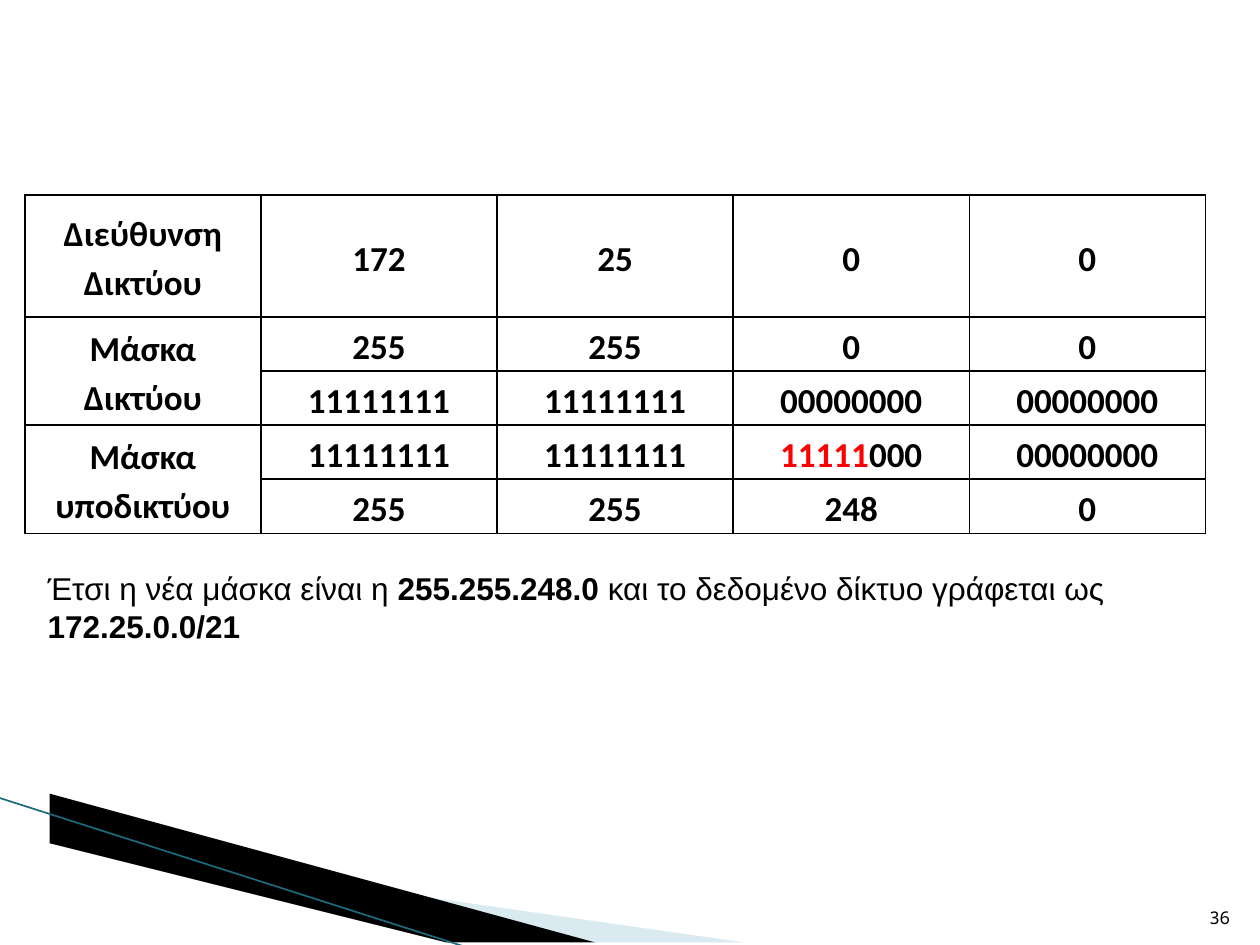
from lxml import etree
from pptx import Presentation
from pptx.dml.color import RGBColor
from pptx.enum.shapes import MSO_CONNECTOR
from pptx.enum.text import MSO_ANCHOR, PP_ALIGN
from pptx.oxml.ns import qn
from pptx.util import Cm, Pt

STRAIGHT = MSO_CONNECTOR.STRAIGHT
MIDDLE, BOTTOM = MSO_ANCHOR.MIDDLE, MSO_ANCHOR.BOTTOM
LEFT, CENTER, RIGHT = PP_ALIGN.LEFT, PP_ALIGN.CENTER, PP_ALIGN.RIGHT
BLACK, RED, PALE_BLUE, TEAL = "000000", "FF0000", "A0CBDC", "1B6A7D"

ONES, ZEROS = "11111111", "00000000"
ROWS = [
    ["Διεύθυνση Δικτύου", "172", "25", "0", "0"],
    ["Μάσκα\nΔικτύου", "255", "255", "0", "0"],
    ["", ONES, ONES, ZEROS, ZEROS],
    ["Μάσκα υποδικτύου", ONES, ONES, "11111000", ZEROS],
    ["", "255", "255", "248", "0"],
]
LABEL_SPANS = [(1, 2), (3, 4)]
SUBNET_BITS = {(3, 3): 5}
ROW_HEIGHTS = [2.46] + [1.09] * 4
COLUMN_WIDTH = 4.76

CONCLUSION = [
    ("Έτσι η νέα μάσκα είναι η ", False),
    ("255.255.248.0 ", True),
    ("και το δεδομένο δίκτυο γράφεται ως ", False),
    ("172.25.0.0/21", True),
]
PAGE_NUMBER = [("36", False)]

WEDGES = [
    ([(1.4, 16.54), (15.11, 19.08), (11.58, 19.08), (1.4, 16.51)], PALE_BLUE, 40),
    ([(1.35, 16.48), (11.61, 19.08), (9.45, 19.1), (1.37, 16.51)], BLACK, 100),
]


def rgb(color):
    return RGBColor.from_string(color)


def style_font(font, name, size):
    font.name = name
    font.size = Pt(size)
    font.color.rgb = rgb(BLACK)


def add_wedge(slide, points, color, opacity):
    builder = slide.shapes.build_freeform(*points[0], scale=Cm(1))
    builder.add_line_segments(points[1:], close=True)
    wedge = builder.convert_to_shape()
    wedge.shadow.inherit = False
    wedge.line.fill.background()
    wedge.fill.solid()
    wedge.fill.fore_color.rgb = rgb(color)
    if opacity < 100:
        tint = wedge.fill._xPr.find(".//" + qn("a:srgbClr"))
        etree.SubElement(tint, qn("a:alpha"), val=str(opacity * 1000))


def add_edge(slide):
    edge = slide.shapes.add_connector(STRAIGHT, Cm(-0.03), Cm(16.08), Cm(9.42), Cm(19.1))
    edge.line.color.rgb = rgb(TEAL)
    edge.line.width = Pt(0.95)
    etree.SubElement(edge._element.spPr, qn("a:effectLst"))


def add_borders(cell):
    properties = cell._tc.get_or_add_tcPr()
    for side in ("a:lnL", "a:lnR", "a:lnT", "a:lnB"):
        border = etree.SubElement(properties, qn(side), w=str(Pt(1)))
        fill = etree.SubElement(border, qn("a:solidFill"))
        etree.SubElement(fill, qn("a:srgbClr"), val=BLACK)


def fill_cell(cell, text, red_digits):
    add_borders(cell)
    cell.fill.background()
    cell.vertical_anchor = MIDDLE
    cell.margin_left = cell.margin_right = Cm(0.18)
    cell.margin_top = cell.margin_bottom = 0
    cell.text = text
    for paragraph in cell.text_frame.paragraphs:
        paragraph.alignment = CENTER
        paragraph.line_spacing = 1.15
        style_font(paragraph.font, "Calibri", 20)
        paragraph.font.bold = True
    if red_digits:
        marked = cell.text_frame.paragraphs[0].runs[0]
        marked.text = text[:red_digits]
        marked.font.color.rgb = rgb(RED)
        cell.text_frame.paragraphs[0].add_run().text = text[red_digits:]


def add_mask_table(slide):
    columns = len(ROWS[0])
    table = slide.shapes.add_table(
        len(ROWS), columns, Cm(0.5), Cm(3.93),
        Cm(COLUMN_WIDTH * columns), Cm(sum(ROW_HEIGHTS))).table
    table.first_row = table.horz_banding = False
    for column in table.columns:
        column.width = Cm(COLUMN_WIDTH)
    for row, height in zip(table.rows, ROW_HEIGHTS):
        row.height = Cm(height)
    for r, texts in enumerate(ROWS):
        for c, text in enumerate(texts):
            fill_cell(table.cell(r, c), text, SUBNET_BITS.get((r, c), 0))
    for first, last in LABEL_SPANS:
        table.cell(first, 0).merge(table.cell(last, 0))


def add_text(slide, box, parts, font, size, align, anchor):
    frame = slide.shapes.add_textbox(*map(Cm, box)).text_frame
    frame.word_wrap = True
    frame.vertical_anchor = anchor
    paragraph = frame.paragraphs[0]
    paragraph.alignment = align
    style_font(paragraph.font, font, size)
    for text, bold in parts:
        run = paragraph.add_run()
        run.text = text
        run.font.bold = bold


def main():
    deck = Presentation()
    deck.slide_width, deck.slide_height = Cm(25.4), Cm(19.05)
    slide = deck.slides.add_slide(deck.slide_layouts[6])
    for wedge in WEDGES:
        add_wedge(slide, *wedge)
    add_edge(slide)
    add_mask_table(slide)
    add_text(slide, (24.03, 17.81, 1.02, 1.02), PAGE_NUMBER,
             "Noto Sans Mono", 10, RIGHT, BOTTOM)
    add_text(slide, (0.71, 11.33, 24, 1.8), CONCLUSION, "Arial", 18, LEFT, MIDDLE)
    deck.save("out.pptx")


if __name__ == "__main__":
    main()
